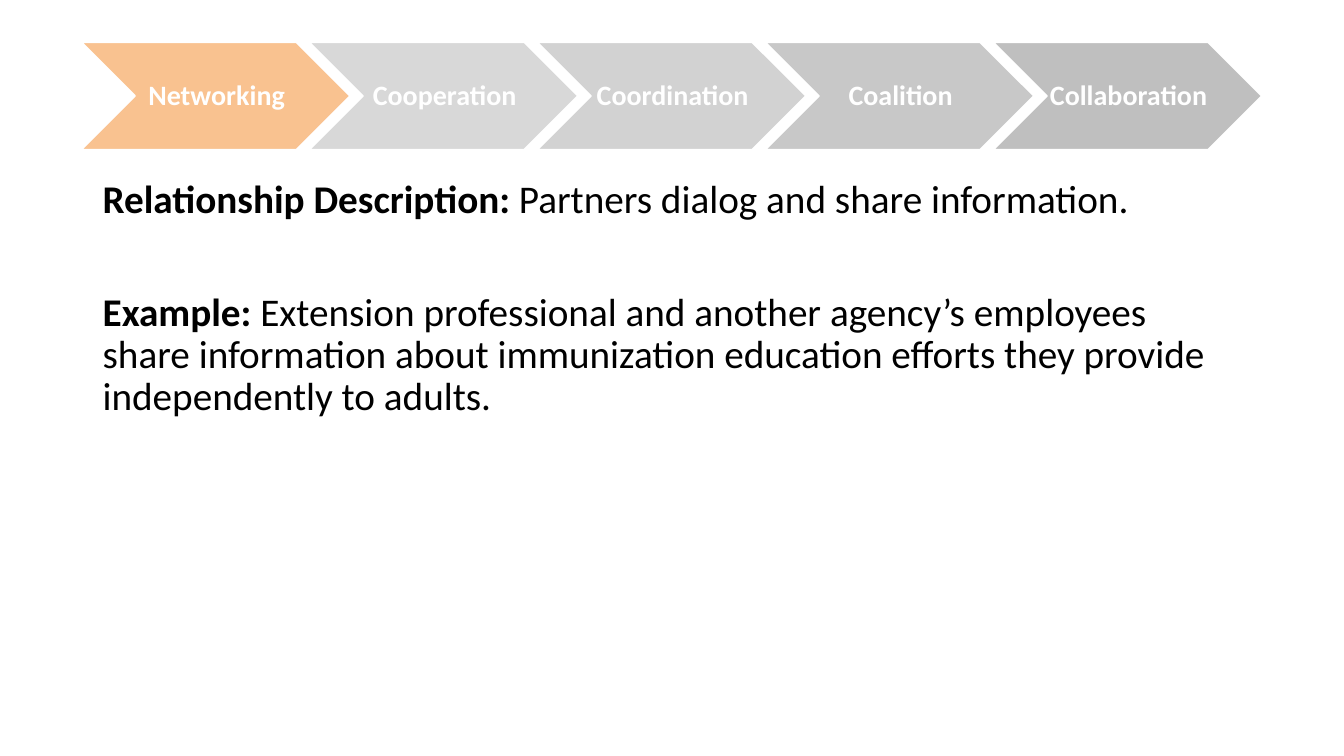
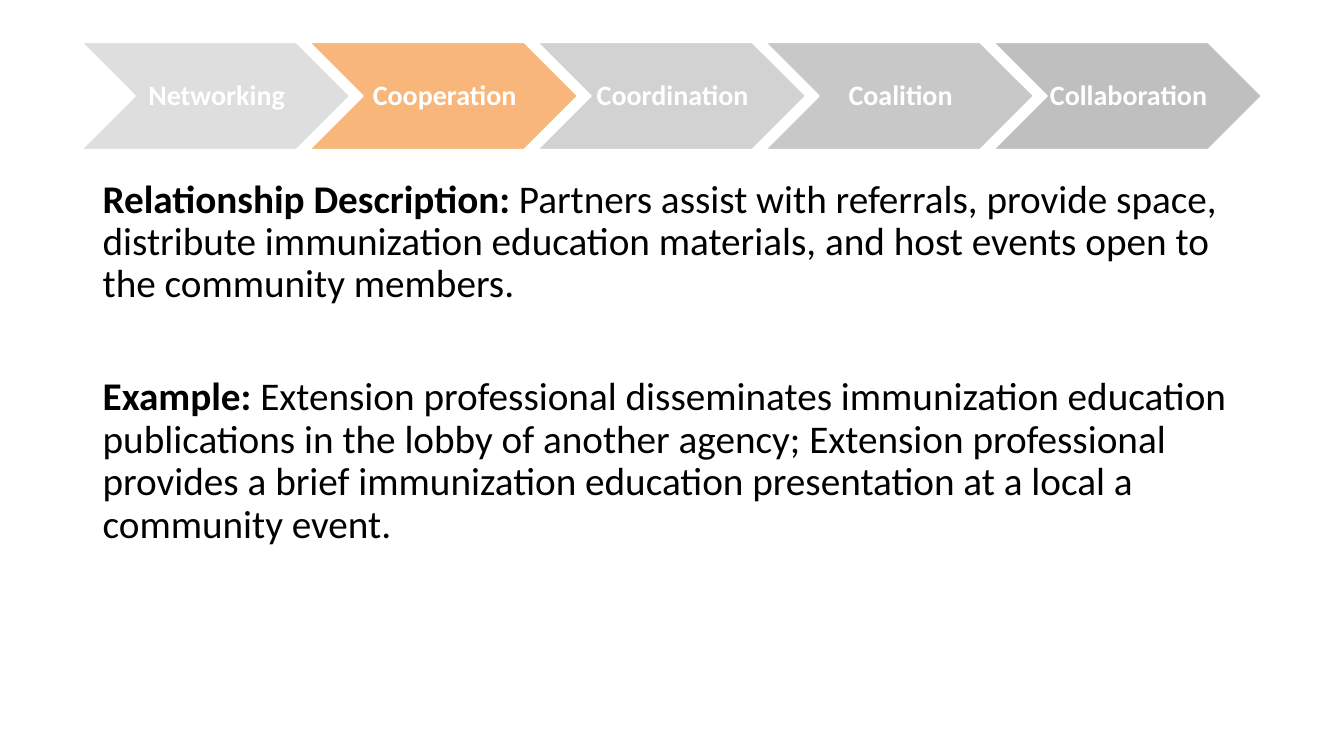
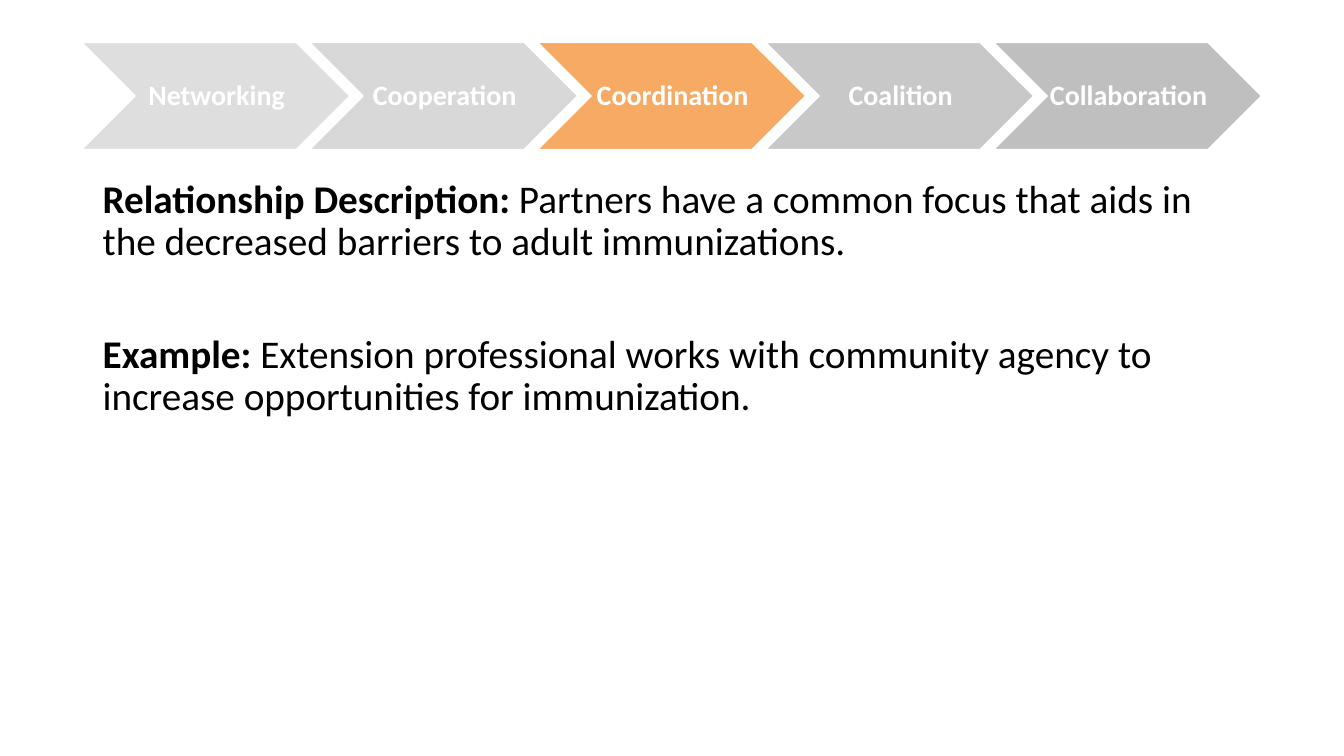
"""Build three slides that walk through the stages of partnership."""
from dataclasses import dataclass

from pptx import Presentation
from pptx.dml.color import RGBColor
from pptx.enum.shapes import MSO_SHAPE
from pptx.enum.text import MSO_ANCHOR, PP_ALIGN
from pptx.oxml.xmlchemy import OxmlElement
from pptx.shapes.autoshape import Shape
from pptx.slide import Slide
from pptx.text.text import _Paragraph
from pptx.util import Inches, Pt

ORANGE = RGBColor(0xF5, 0x86, 0x22)
GRAY = RGBColor(0xBF, 0xBF, 0xBF)
WHITE = RGBColor(0xFF, 0xFF, 0xFF)
BLACK = RGBColor(0x00, 0x00, 0x00)
FONT = "Calibri"

BAND_LEFT, BAND_TOP = 0.81, 0.42
STAGE_WIDTH = 2.66
STAGE_HEIGHT = 0.4 * STAGE_WIDTH
STAGE_PITCH = 0.85 * STAGE_WIDTH
BODY_LEFT, BODY_TOP, BODY_WIDTH = 0.92, 1.73, 11.5


@dataclass(frozen=True)
class Stage:
    """A step of the band, with its opacity in percent."""

    name: str
    opacity: int


@dataclass(frozen=True)
class Page:
    """The text of one slide and the height of its body."""

    description: str
    example: str
    body_height: float


STAGES = (
    Stage("Networking", 50),
    Stage("Cooperation", 60),
    Stage("Coordination", 70),
    Stage("Coalition", 85),
    Stage("Collaboration", 100),
)

PAGES = (
    Page(
        "Partners dialog and share information.",
        "Extension professional and another agency’s employees share information "
        "about immunization education efforts they provide independently to adults.",
        4.76,
    ),
    Page(
        "Partners assist with referrals, provide space, distribute immunization "
        "education materials, and host events open to the community members.",
        "Extension professional disseminates immunization education publications in "
        "the lobby of another agency; Extension professional provides a brief "
        "immunization education presentation at a local a community event.",
        5.61,
    ),
    Page(
        "Partners have a common focus that aids in the decreased barriers to adult "
        "immunizations.",
        "Extension professional works with community agency to increase "
        "opportunities for immunization.",
        5.36,
    ),
)


def set_opacity(sp: Shape, percent: int) -> None:
    """Make the solid fill of a shape partly transparent."""
    alpha = OxmlElement("a:alpha")
    alpha.set("val", str(percent * 1000))
    sp.fill._xPr.find(".//{*}srgbClr").append(alpha)


def add_run(p: _Paragraph, text: str, size: float, color: RGBColor, bold: bool) -> None:
    """Append a formatted run to a paragraph."""
    r = p.add_run()
    r.text = text
    r.font.name = FONT
    r.font.size = Pt(size)
    r.font.bold = bold
    r.font.color.rgb = color


def add_stage(s: Slide, column: int, stage: Stage, active: bool) -> None:
    """Draw one chevron of the band."""
    sp = s.shapes.add_shape(
        MSO_SHAPE.CHEVRON,
        Inches(BAND_LEFT + column * STAGE_PITCH),
        Inches(BAND_TOP),
        Inches(STAGE_WIDTH),
        Inches(STAGE_HEIGHT),
    )
    sp.shadow.inherit = False
    sp.fill.solid()
    sp.fill.fore_color.rgb = ORANGE if active else GRAY
    if stage.opacity < 100:
        set_opacity(sp, stage.opacity)
    sp.line.color.rgb = WHITE
    sp.line.width = Pt(1)
    tf = sp.text_frame
    tf.word_wrap = True
    tf.vertical_anchor = MSO_ANCHOR.MIDDLE
    tf.margin_left, tf.margin_right = Inches(0.02), 0
    tf.margin_top = tf.margin_bottom = Inches(0.01)
    p = tf.paragraphs[0]
    p.alignment = PP_ALIGN.CENTER
    p.line_spacing = 0.9
    add_run(p, stage.name, 20, WHITE, True)


def add_body(s: Slide, page: Page) -> None:
    """Write the description and the example below the band."""
    box = s.shapes.add_textbox(
        Inches(BODY_LEFT), Inches(BODY_TOP), Inches(BODY_WIDTH), Inches(page.body_height)
    )
    tf = box.text_frame
    tf.word_wrap = True
    description, example = tf.paragraphs[0], tf.add_paragraph()
    example.space_before = Pt(50.5)
    for p, label, text in (
        (description, "Relationship Description: ", page.description),
        (example, "Example: ", page.example),
    ):
        p.line_spacing = 0.9
        add_run(p, label, 28, BLACK, True)
        add_run(p, text, 28, BLACK, False)


def main() -> None:
    """Build and save the presentation."""
    prs = Presentation()
    prs.slide_width, prs.slide_height = Inches(13.33), Inches(7.5)
    for number, page in enumerate(PAGES):
        s = prs.slides.add_slide(prs.slide_layouts[6])
        for column, stage in enumerate(STAGES):
            add_stage(s, column, stage, column == number)
        add_body(s, page)
    prs.save("out.pptx")


if __name__ == "__main__":
    main()
